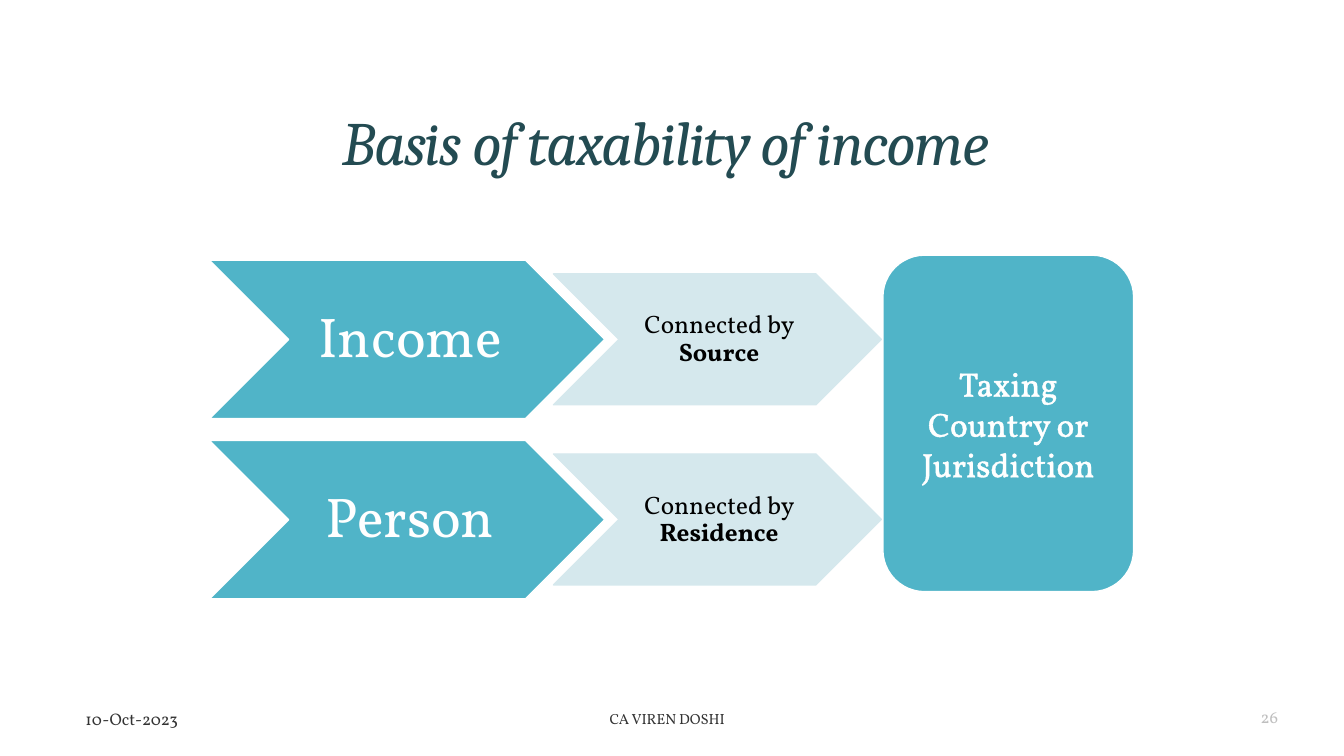
import pptx
import pptx.util
import pptx.dml.color
import pptx.enum.shapes
import pptx.enum.text
import lxml.etree

Cm = pptx.util.Cm
Pt = pptx.util.Pt
RGBColor = pptx.dml.color.RGBColor
MSO_SHAPE = pptx.enum.shapes.MSO_SHAPE
PP_ALIGN = pptx.enum.text.PP_ALIGN
MSO_ANCHOR = pptx.enum.text.MSO_ANCHOR

TEAL = RGBColor(0x50, 0xB4, 0xC8)
PALE = RGBColor(0xD5, 0xE8, 0xED)
DARK_TEAL = RGBColor(0x23, 0x4B, 0x52)
WHITE = RGBColor(0xFF, 0xFF, 0xFF)
BLACK = RGBColor(0x00, 0x00, 0x00)
CHARCOAL = RGBColor(0x33, 0x33, 0x33)
LIGHT_GREY = RGBColor(0xBF, 0xBF, 0xBF)
A = "{http://schemas.openxmlformats.org/drawingml/2006/main}"


def add_block(kind, left, top, width, height, fill, line):
    sp = s.shapes.add_shape(kind, Cm(left), Cm(top), Cm(width), Cm(height))
    sp.shadow.inherit = False
    sp.fill.solid()
    sp.fill.fore_color.rgb = fill
    sp.line.color.rgb = line
    sp.line.width = Pt(1)
    return sp


def write(sp, texts, size, color, align=PP_ALIGN.CENTER, anchor=MSO_ANCHOR.MIDDLE, font="Vollkorn"):
    tf = sp.text_frame
    tf.word_wrap = True
    tf.vertical_anchor = anchor
    p = tf.paragraphs[0]
    p.alignment = align
    p.font.size = Pt(size)
    p.font.name = font
    p.font.color.rgb = color
    for text in texts:
        p.add_run().text = text
    return p


prs = pptx.Presentation()
prs.slide_width = Cm(33.87)
prs.slide_height = Cm(19.05)
s = prs.slides.add_slide(prs.slide_layouts[5])

title = s.shapes.title
title.left, title.top, title.width, title.height = Cm(1.83), Cm(1.4), Cm(29.92), Cm(4.6)
p = write(title, ["Basis of taxability of income"], 44, DARK_TEAL, font="Cambria")
p.font.italic = True
p.line_spacing = 0.85
p.runs[0].font._element.set("spc", "-120")

rows = [("Income", "Source"), ("Person", "Residence")]
for i, (subject, link) in enumerate(rows):
    top = 6.56 + i * 4.54
    sp = add_block(MSO_SHAPE.CHEVRON, 5.28, top, 9.96, 3.99, TEAL, WHITE)
    p = write(sp, [subject], 40, WHITE)
    p.line_spacing = 0.9
    tf = sp.text_frame
    tf.margin_left, tf.margin_right = Cm(0.15), 0
    tf.margin_top = tf.margin_bottom = Cm(0.08)

    sp = add_block(MSO_SHAPE.CHEVRON, 13.95, top + 0.34, 8.26, 3.3, PALE, PALE)
    p = write(sp, ["Connected by ", link], 18, BLACK)
    p.line_spacing = 0.9
    p.runs[1].font.bold = True
    tf = sp.text_frame
    tf.margin_left, tf.margin_right = Cm(0.08), 0
    tf.margin_top = tf.margin_bottom = Cm(0.03)

sp = add_block(MSO_SHAPE.ROUNDED_RECTANGLE, 22.25, 6.43, 6.32, 8.48, TEAL, WHITE)
p = write(sp, ["Taxing Country or Jurisdiction"], 24, WHITE)
outline = lxml.etree.Element(A + "ln", w="9525")
fill = lxml.etree.SubElement(outline, A + "solidFill")
lxml.etree.SubElement(fill, A + "srgbClr", val=str(WHITE))
p.runs[0].font._element.insert(0, outline)

footers = [
    ("10-Oct-2023", 1.9, 11.43, 12, CHARCOAL, PP_ALIGN.LEFT, MSO_ANCHOR.MIDDLE),
    ("CA VIREN DOSHI", 9.83, 13.97, 10.5, CHARCOAL, PP_ALIGN.CENTER, MSO_ANCHOR.MIDDLE),
    ("26", 24.64, 7.82, 12, LIGHT_GREY, PP_ALIGN.RIGHT, MSO_ANCHOR.BOTTOM),
]
for text, left, width, size, color, align, anchor in footers:
    sp = s.shapes.add_textbox(Cm(left), Cm(17.8), Cm(width), Cm(0.63))
    write(sp, [text], size, color, align, anchor)

prs.save("out.pptx")
